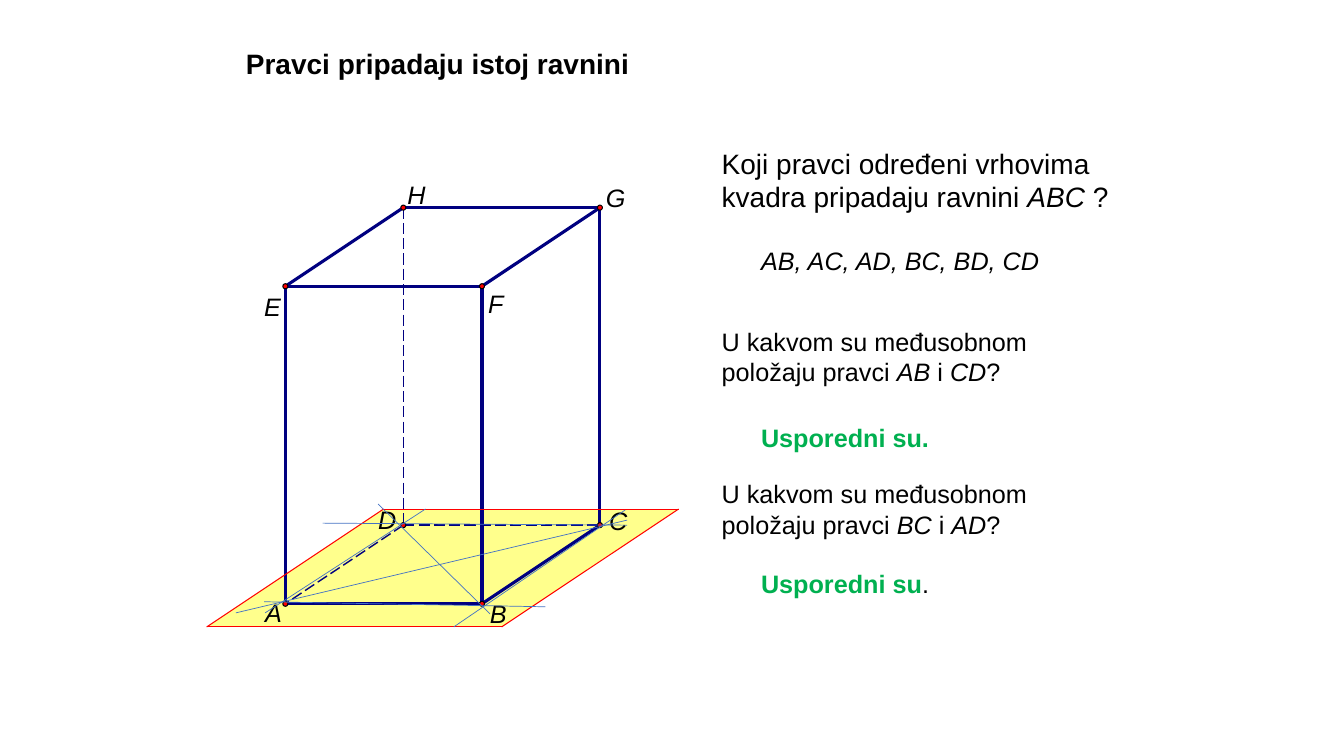
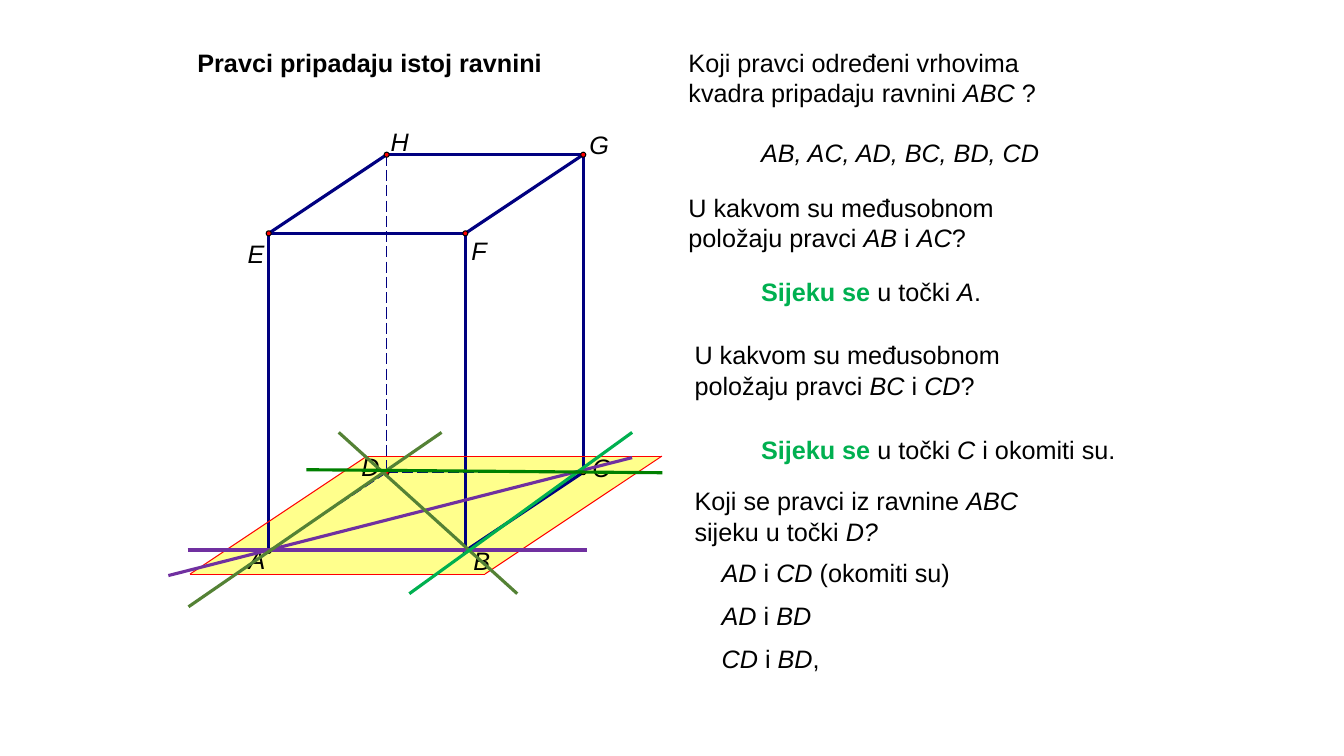
import dataclasses

import lxml.etree
import pptx
import pptx.dml.color
import pptx.enum.dml
import pptx.enum.shapes
import pptx.oxml.ns
import pptx.util


@dataclasses.dataclass(frozen=True)
class Theme:
    font: str = "Arial"
    ink: str = "000000"
    verdict: str = "00B050"
    edge: str = "000080"
    plane: str = "FFFF00"
    border: str = "FF0000"
    thin: str = "4472C4"
    purple: str = "7030A0"
    olive: str = "548235"
    green: str = "008000"
    large: int = 20
    body: int = 18
    plane_opacity: int = 45
    bold_width: float = 2.25
    dash_width: float = 1
    border_width: float = 0.75
    cells_per_inch: int = 10


THEME = Theme()
EDGES = "AB AE EF FB CB GF GC HG HE".split()
HIDDEN_EDGES = "DA DC HD".split()
LABEL_OFFSETS = {
    "D": (-2.5, -2.1), "H": (0.4, -2.8), "G": (0.6, -2.5), "F": (0.6, 0.2),
    "A": (-2, -0.6), "B": (0.8, -0.5), "C": (0.9, -2), "E": (-2.1, 0.5),
}
SIDE, HEIGHT = 19.5, 31.5
DEPTH_X, DEPTH_Y = 11.7, 7.8
PLANE_SCALE, PLANE_DROP = 1.5, 0.35
DOT = 0.5
TITLE = "Pravci pripadaju istoj ravnini"
PLANE_QUESTION = "Koji pravci određeni vrhovima kvadra pripadaju ravnini *ABC* ?"
PLANE_LINES = "*AB, AC, AD, BC, BD, CD*"
POSITION_QUESTION = "U kakvom su međusobnom položaju pravci *{}* i *{}*?"


def cells(count):
    return pptx.util.Inches(count / THEME.cells_per_inch)


def rgb(code):
    return pptx.dml.color.RGBColor.from_string(code)


class Lesson:
    def __init__(self):
        self.deck = pptx.Presentation()
        self.deck.slide_width = cells(133.3)
        self.deck.slide_height = cells(75)
        self.shapes = None

    def new_slide(self):
        self.shapes = self.deck.slides.add_slide(self.deck.slide_layouts[6]).shapes

    def add_run(self, paragraph, words, size, color=THEME.ink, bold=False, italic=False):
        run = paragraph.add_run()
        run.text = words
        run.font.name = THEME.font
        run.font.size = pptx.util.Pt(size)
        run.font.color.rgb = rgb(color)
        run.font.bold = bold
        run.font.italic = italic

    def text(self, col, row, width, height, *lines, size=THEME.body, verdict="", bold=False):
        frame = self.shapes.add_textbox(*map(cells, (col, row, width, height))).text_frame
        frame.word_wrap = True
        for index, line in enumerate(lines):
            paragraph = frame.paragraphs[0]
            if index:
                paragraph = frame.add_paragraph()
                paragraph.space_before = pptx.util.Pt(size / 2)
            if verdict:
                self.add_run(paragraph, verdict, size, THEME.verdict, bold=True)
            for part, words in enumerate(line.split("*")):
                if words:
                    self.add_run(paragraph, words, size, bold=bold, italic=part % 2 == 1)
        return frame

    def line(self, start, end, color, width, dashed=False):
        segment = self.shapes.add_connector(
            pptx.enum.shapes.MSO_CONNECTOR.STRAIGHT, *map(cells, (*start, *end)))
        segment.line.color.rgb = rgb(color)
        segment.line.width = pptx.util.Pt(width)
        if dashed:
            segment.line.dash_style = pptx.enum.dml.MSO_LINE.LONG_DASH
        lxml.etree.SubElement(segment.element.spPr, pptx.oxml.ns.qn("a:effectLst"))

    def vertex(self, name, col, row):
        dot = self.shapes.add_shape(
            pptx.enum.shapes.MSO_SHAPE.OVAL,
            *map(cells, (col - DOT / 2, row - DOT / 2, DOT, DOT)))
        dot.shadow.inherit = False
        dot.fill.solid()
        dot.fill.fore_color.rgb = rgb(THEME.border)
        dot.line.color.rgb = rgb(THEME.ink)
        dot.line.width = 0
        shift_x, shift_y = LABEL_OFFSETS[name]
        frame = self.text(col + shift_x, row + shift_y, 1.8, 3, f"*{name}*")
        frame.word_wrap = False
        frame.margin_left = frame.margin_right = frame.margin_top = frame.margin_bottom = 0

    def plane(self, corners):
        first, *others = [tuple(map(cells, corner)) for corner in corners]
        builder = self.shapes.build_freeform(*first)
        builder.add_line_segments(others, close=True)
        area = builder.convert_to_shape()
        area.shadow.inherit = False
        area.fill.solid()
        area.fill.fore_color.rgb = rgb(THEME.plane)
        area.line.fill.background()
        color = area.element.spPr.find(pptx.oxml.ns.qn("a:solidFill"))[0]
        lxml.etree.SubElement(
            color, pptx.oxml.ns.qn("a:alpha"), val=str(THEME.plane_opacity * 1000))

    def cuboid(self, col, row):
        base = {
            "A": (col, row),
            "B": (col + SIDE, row),
            "C": (col + SIDE + DEPTH_X, row - DEPTH_Y),
            "D": (col + DEPTH_X, row - DEPTH_Y),
        }
        top = {upper: (base[lower][0], base[lower][1] - HEIGHT)
               for lower, upper in zip("ABCD", "EFGH")}
        points = {**base, **top}
        center_x = col + (SIDE + DEPTH_X) / 2
        center_y = row - DEPTH_Y / 2
        corners = [(center_x + PLANE_SCALE * (x - center_x),
                    center_y + PLANE_DROP + PLANE_SCALE * (y - center_y))
                   for x, y in base.values()]
        self.plane(corners)
        for start, end in EDGES:
            self.line(points[start], points[end], THEME.edge, THEME.bold_width)
        for start, end in HIDDEN_EDGES:
            self.line(points[start], points[end], THEME.edge, THEME.dash_width, dashed=True)
        for start, end in zip(corners, corners[1:] + corners[:1]):
            self.line(start, end, THEME.border, THEME.border_width)
        for name in LABEL_OFFSETS:
            self.vertex(name, *points[name])


def parallel_lines(lesson):
    lesson.new_slide()
    lesson.text(23.4, 4.1, 45.3, 4.4, TITLE, size=THEME.large, bold=True)
    lesson.cuboid(28.3, 59.9)
    lesson.text(70.6, 14, 46.6, 7.7, PLANE_QUESTION, size=THEME.large)
    lesson.text(74.5, 23.8, 31.5, 4, PLANE_LINES)
    lesson.text(70.6, 31.9, 35.4, 7, POSITION_QUESTION.format("AB", "CD"))
    lesson.text(74.5, 41.4, 35.4, 4, "", verdict="Usporedni su.")
    lesson.text(70.6, 47, 35.4, 7, POSITION_QUESTION.format("BC", "AD"))
    lesson.text(74.5, 55.9, 35.4, 4, ".", verdict="Usporedni su")
    for start, end in (
        ((26.2, 59.7), (54.1, 60.2)),
        ((23.4, 60.8), (62.2, 51.6)),
        ((26.3, 60.8), (42.2, 50.5)),
        ((45, 62.2), (62, 50.6)),
        ((48.6, 60.9), (37.5, 50)),
        ((62.2, 52.1), (32, 51.9)),
    ):
        lesson.line(start, end, THEME.thin, 0.5)


def crossing_lines(lesson):
    lesson.new_slide()
    lesson.text(18.6, 4.2, 37.4, 4, TITLE, bold=True)
    lesson.cuboid(26.65, 54.65)
    lesson.text(67.3, 4.2, 39.9, 7, PLANE_QUESTION)
    lesson.text(74.5, 13.1, 31.5, 4, PLANE_LINES)
    lesson.text(67.3, 18.6, 35.4, 7, POSITION_QUESTION.format("AB", "AC"))
    lesson.text(74.5, 26.9, 35.4, 4, "u točki *A*.", verdict="Sijeku se ")
    lesson.text(67.9, 33.2, 35.4, 7, POSITION_QUESTION.format("BC", "CD"))
    lesson.text(74.5, 42.6, 39.4, 4, "u točki *C* i okomiti su.", verdict="Sijeku se ")
    lesson.text(67.9, 47.7, 39.4, 7, "Koji se pravci iz ravnine *ABC *sijeku u točki *D?*")
    lesson.text(70.6, 54.8, 39.4, 13,
                "*AD* i *CD* (okomiti su)", "*AD* i *BD*", "*CD* i *BD*,")
    for start, end, color, width in (
        ((18.6, 54.6), (58.2, 54.6), THEME.purple, 2.75),
        ((16.7, 57.1), (62.7, 45.4), THEME.purple, THEME.bold_width),
        ((18.7, 60.2), (43.8, 42.9), THEME.olive, THEME.bold_width),
        ((51.3, 58.9), (33.6, 42.9), THEME.olive, THEME.bold_width),
        ((40.6, 58.9), (62.7, 42.9), THEME.verdict, THEME.bold_width),
        ((65.7, 46.9), (30.4, 46.6), THEME.green, THEME.bold_width),
    ):
        lesson.line(start, end, color, width)


def main():
    lesson = Lesson()
    parallel_lines(lesson)
    crossing_lines(lesson)
    lesson.deck.save("out.pptx")


if __name__ == "__main__":
    main()
